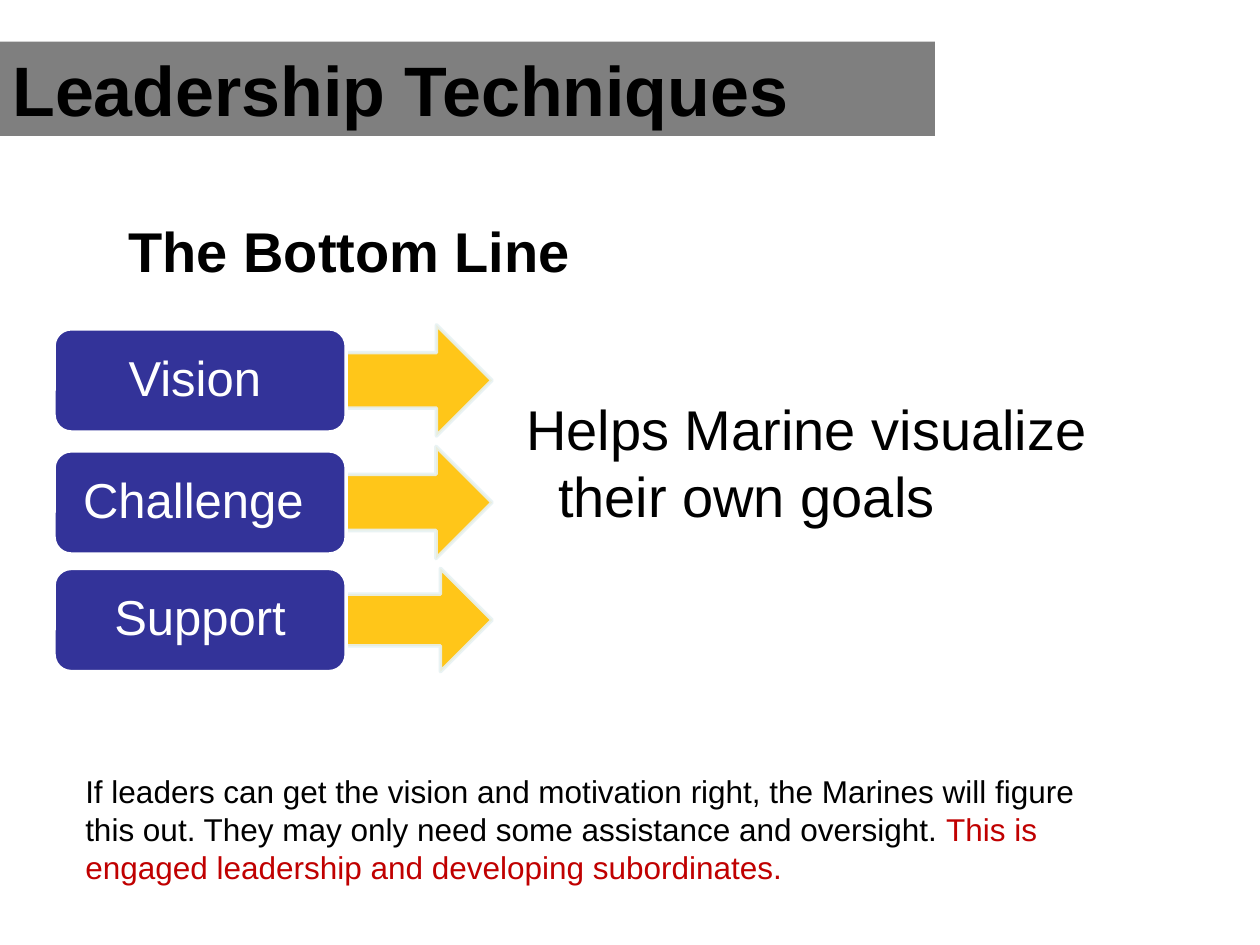
"""Build the Leadership Techniques slide with three labelled arrows."""
from lxml.etree import SubElement
from pptx import Presentation
from pptx.dml.color import RGBColor
from pptx.enum.shapes import MSO_SHAPE as Shape
from pptx.enum.text import MSO_ANCHOR as Anchor, PP_ALIGN as Align
from pptx.oxml.ns import qn
from pptx.util import Cm, Pt

BLACK = RGBColor(0x00, 0x00, 0x00)
WHITE = RGBColor(0xFF, 0xFF, 0xFF)
GRAY = RGBColor(0x7F, 0x7F, 0x7F)
NAVY = RGBColor(0x33, 0x33, 0x99)
GOLD = RGBColor(0xFF, 0xC0, 0x00)
PALE = RGBColor(0xE7, 0xF2, 0xF3)
RED = RGBColor(0xC0, 0x00, 0x00)


def add_block(kind, box, fill, edge=None, opacity=None):
    block = slide.shapes.add_shape(kind, *map(Cm, box))
    block.shadow.inherit = False
    block.fill.solid()
    block.fill.fore_color.rgb = fill
    if edge is None:
        block.line.fill.background()
    else:
        block.line.color.rgb = edge
        block.line.width = Pt(2)
    if opacity:
        for color in block._element.spPr.iter(qn("a:srgbClr")):
            SubElement(color, qn("a:alpha"), val=str(opacity * 1000))
    return block


def write(holder, runs, layout, indent=None):
    frame = holder.text_frame
    frame.word_wrap = True
    frame.vertical_anchor = layout.get("anchor", Anchor.TOP)
    paragraph = frame.paragraphs[0]
    paragraph.alignment = layout.get("align", Align.LEFT)
    paragraph.line_spacing = layout.get("spacing", 1.0)
    if indent:
        left, first = indent
        properties = paragraph._p.get_or_add_pPr()
        properties.set("marL", str(Cm(left)))
        properties.set("indent", str(Cm(first)))
    for words, size, color, bold in runs:
        run = paragraph.add_run()
        run.text = words
        run.font.color.rgb = color
        style = {"name": "Arial", "size": Pt(size), "bold": bold}
        for attribute, value in style.items():
            setattr(run.font, attribute, value)


deck = Presentation()
deck.slide_width, deck.slide_height = Cm(25.4), Cm(19.05)
slide = deck.slides.add_slide(deck.slide_layouts[6])

banner = add_block(Shape.RECTANGLE, (0, 0.84, 18.85, 1.9), GRAY)
write(banner, [("Leadership Techniques", 40, BLACK, True)], {"anchor": Anchor.MIDDLE})

passages = [
    ((1.07, 4.24, 19.48, 1.7), (2.06, -0.79),
     [("The Bottom Line", 32, BLACK, True)]),
    ((7.82, 7.82, 15.88, 3), (3.18, -0.64),
     [("Helps Marine visualize their own goals", 32, BLACK, False)]),
    ((1.47, 15.44, 20.96, 2.57), None,
     [("If leaders can get the vision and motivation right, the Marines will figure "
       "this out. They may only need some assistance and oversight. ", 18, BLACK, False),
      ("This is engaged leadership and developing subordinates.", 18, RED, False)]),
]
for box, indent, runs in passages:
    write(slide.shapes.add_textbox(*map(Cm, box)), runs, {}, indent)

label_left, label_width, label_height = 1.09, 5.89, 2.08
label_layout = {"anchor": Anchor.MIDDLE, "align": Align.CENTER, "spacing": 0.9}
steps = [
    ([("Vision", 28, WHITE, False), (" ", 22, WHITE, False)], 6.63, 2.24),
    ([("Challenge ", 28, WHITE, False)], 9.09, 2.26),
    ([("Support", 28, WHITE, False)], 11.46, 2.08),
]
for runs, top, arrow_height in steps:
    arrow_top = top + (label_height - arrow_height) / 2
    add_block(Shape.RIGHT_ARROW,
              (label_left + label_width, arrow_top, 2.94, arrow_height), GOLD, PALE, 90)
    label = add_block(Shape.ROUNDED_RECTANGLE,
                      (label_left, top, label_width, label_height), NAVY, WHITE)
    write(label, runs, label_layout)

deck.save("out.pptx")
